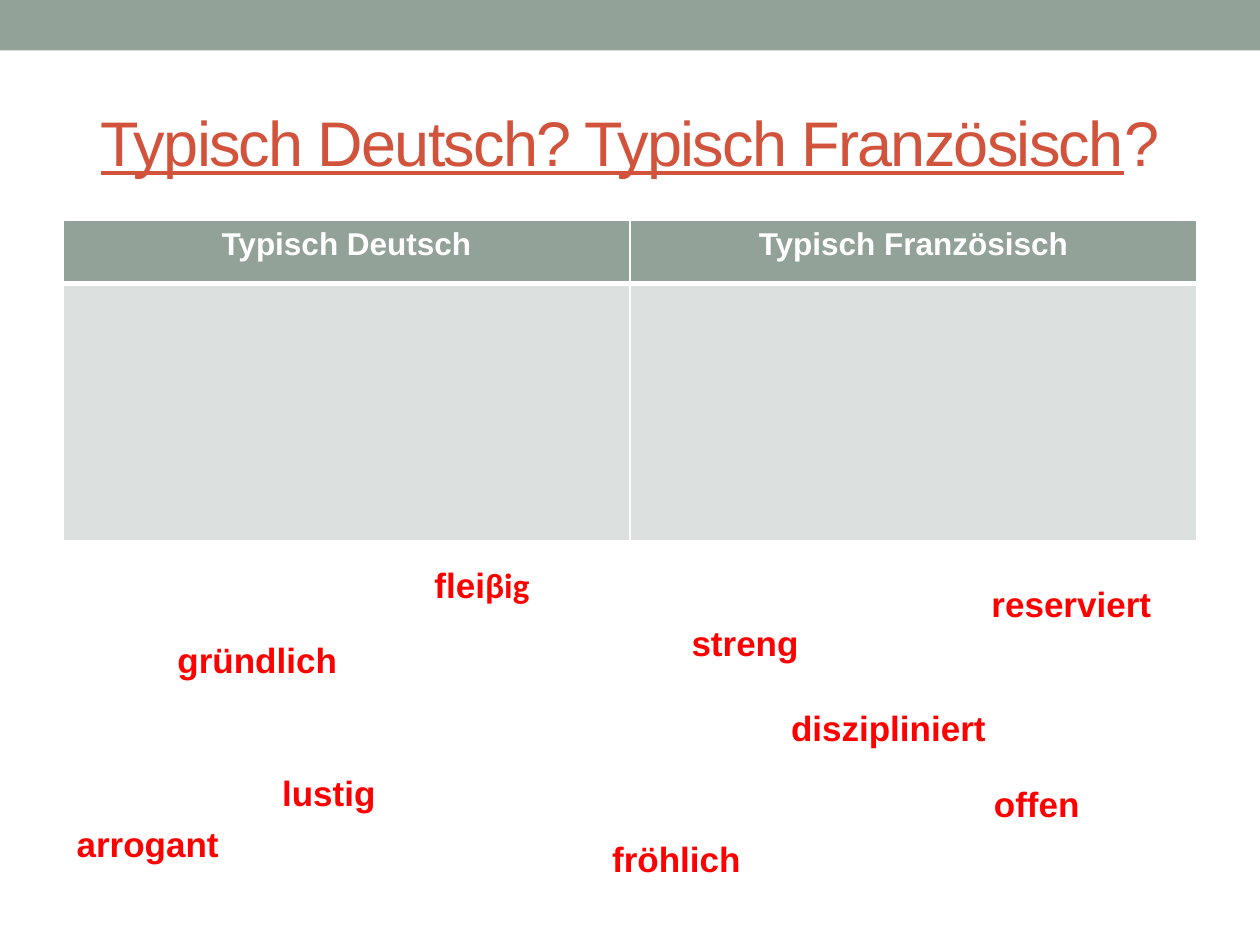
from dataclasses import dataclass
from lxml.etree import SubElement
from pptx import Presentation
from pptx.dml.color import RGBColor
from pptx.enum.shapes import MSO_SHAPE
from pptx.enum.text import MSO_ANCHOR, MSO_AUTO_SIZE, PP_ALIGN
from pptx.oxml.ns import qn
from pptx.util import Inches, Pt


@dataclass(frozen=True)
class Theme:
    sage: str = "93A299"
    pale: str = "DCE0DE"
    rust: str = "D2533C"
    red: str = "FF0000"
    white: str = "FFFFFF"
    font: str = "Arial"
    alt: str = "Calibri"
    title: int = 36
    head: int = 18
    word: int = 20


THEME = Theme()
WIDE, HIGH = 10, 7.5
EDGE = 0.05 * WIDE
SPAN = WIDE - 2 * EDGE
HEADS = ["Typisch Deutsch", "Typisch Französisch"]
ROWS = [0.5, 2.04]
WORDS = [
    ("offen", 7.79, 6.16, 0.89),
    ("flei|βig", 3.35, 4.42, 0.96),
    ("diszipliniert", 6.18, 5.56, 1.76),
    ("lustig", 2.14, 6.07, 0.95),
    ("streng", 5.39, 4.88, 1.06),
    ("arrogant", 0.51, 6.48, 1.34),
    ("reserviert", 7.77, 4.57, 1.48),
    ("gründlich", 1.31, 5.02, 1.48),
    ("fröhlich", 4.76, 6.6, 1.23),
]


def apply(item, style):
    for name, value in style.items():
        setattr(item, name, value)


def paint(fill, color):
    fill.solid()
    fill.fore_color.rgb = RGBColor.from_string(color)


def write(para, text, size, color, **style):
    run = para.add_run()
    run.text = text
    apply(run.font, {"name": THEME.font, "size": Pt(size), **style})
    run.font.color.rgb = RGBColor.from_string(color)
    return run


def add_band(slide):
    band = slide.shapes.add_shape(
        MSO_SHAPE.RECTANGLE, 0, 0, Inches(WIDE), Inches(0.4))
    band.shadow.inherit = False
    paint(band.fill, THEME.sage)
    band.line.fill.background()


def add_title(slide):
    title = slide.shapes.title
    apply(title, {"left": Inches(EDGE), "top": Inches(0.58),
                  "width": Inches(SPAN), "height": Inches(1.08)})
    frame = title.text_frame
    apply(frame, {"vertical_anchor": MSO_ANCHOR.MIDDLE, "word_wrap": True,
                  "auto_size": MSO_AUTO_SIZE.NONE})
    para = frame.paragraphs[0]
    para.alignment = PP_ALIGN.CENTER
    for text, under in [("Typisch Deutsch? Typisch Französisch", True), ("?", False)]:
        run = write(para, text, THEME.title, THEME.rust, underline=under)
        run.font._element.set("spc", "-100")


def set_edges(cell, widths):
    props = cell._tc.get_or_add_tcPr()
    for side, width in zip("LRTB", widths):
        line = SubElement(props, qn(f"a:ln{side}"), w=str(Pt(width)))
        fill = SubElement(line, qn("a:solidFill"))
        SubElement(fill, qn("a:srgbClr"), val=THEME.white)


def add_grid(slide):
    table = slide.shapes.add_table(
        len(ROWS), len(HEADS), Inches(EDGE), Inches(1.75),
        Inches(SPAN), Inches(sum(ROWS))).table
    for row, size in zip(table.rows, ROWS):
        row.height = Inches(size)
    for col, head in enumerate(HEADS):
        table.columns[col].width = Inches(SPAN / len(HEADS))
        top, body = table.cell(0, col), table.cell(1, col)
        for cell, edges, color in [(top, (1, 1, 1, 3), THEME.sage),
                                   (body, (1, 1, 3, 1), THEME.pale)]:
            set_edges(cell, edges)
            paint(cell.fill, color)
        para = top.text_frame.paragraphs[0]
        para.alignment = PP_ALIGN.CENTER
        write(para, head, THEME.head, THEME.white, bold=True)


def add_word(slide, text, left, top, width):
    box = slide.shapes.add_textbox(*map(Inches, (left, top, width, 0.44)))
    frame = box.text_frame
    apply(frame, {"word_wrap": False, "auto_size": MSO_AUTO_SIZE.SHAPE_TO_FIT_TEXT})
    for part, font in zip(text.split("|"), (THEME.font, THEME.alt)):
        write(frame.paragraphs[0], part, THEME.word, THEME.red, bold=True, name=font)


def main():
    deck = Presentation()
    apply(deck, {"slide_width": Inches(WIDE), "slide_height": Inches(HIGH)})
    slide = deck.slides.add_slide(deck.slide_layouts[5])
    add_band(slide)
    add_title(slide)
    add_grid(slide)
    for word in WORDS:
        add_word(slide, *word)
    deck.save("out.pptx")


if __name__ == "__main__":
    main()
